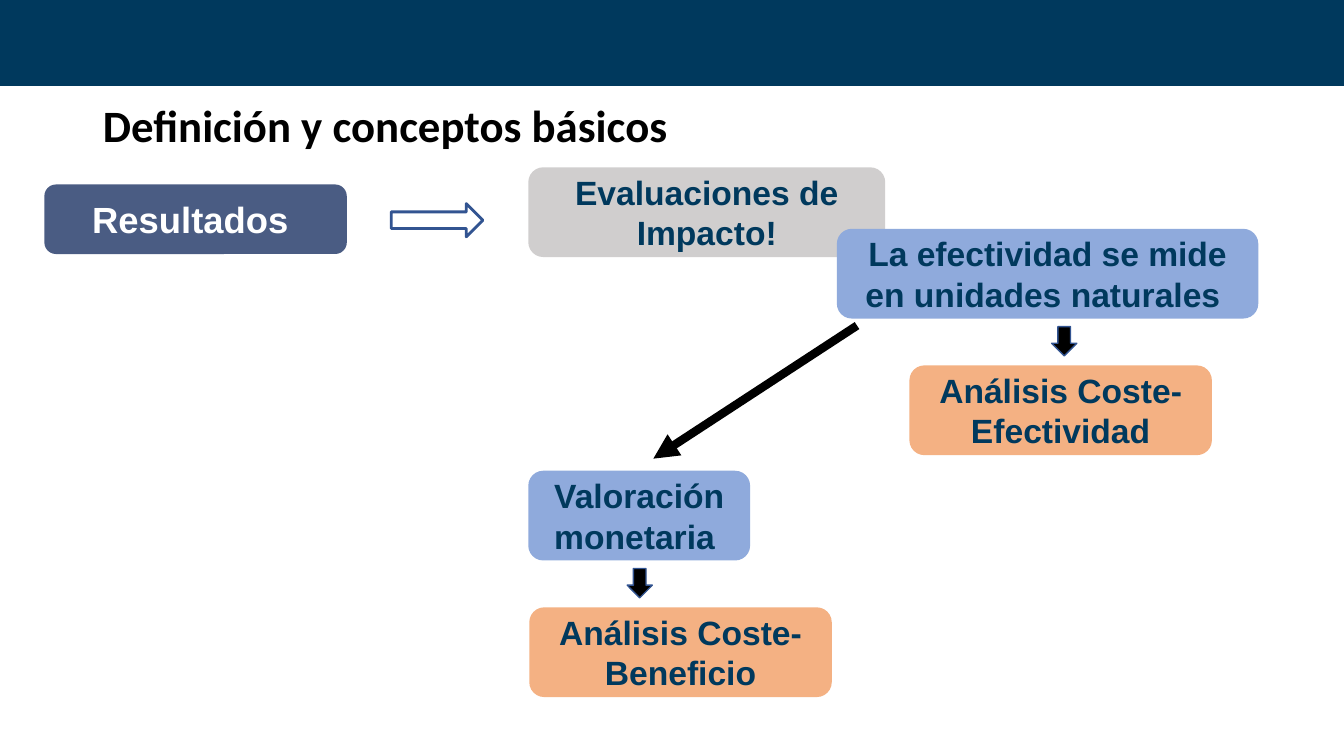
from lxml import etree
from pptx import Presentation
from pptx.dml.color import RGBColor
from pptx.enum.shapes import MSO_CONNECTOR, MSO_SHAPE
from pptx.enum.text import MSO_ANCHOR, MSO_AUTO_SIZE, PP_ALIGN
from pptx.oxml.ns import qn
from pptx.util import Inches, Pt

NAVY = RGBColor(0x00, 0x39, 0x5D)
SLATE = RGBColor(0x4A, 0x5C, 0x83)
GRAY = RGBColor(0xD0, 0xCE, 0xCE)
BLUE = RGBColor(0x8F, 0xAA, 0xDC)
ORANGE = RGBColor(0xF4, 0xB1, 0x83)
OUTLINE = RGBColor(0x32, 0x54, 0x91)
BLACK = RGBColor(0x00, 0x00, 0x00)
WHITE = RGBColor(0xFF, 0xFF, 0xFF)

RECTANGLE = MSO_SHAPE.RECTANGLE
ROUNDED = MSO_SHAPE.ROUNDED_RECTANGLE
RIGHT_ARROW = MSO_SHAPE.RIGHT_ARROW
DOWN_ARROW = MSO_SHAPE.DOWN_ARROW
STRAIGHT = MSO_CONNECTOR.STRAIGHT
MIDDLE = MSO_ANCHOR.MIDDLE
NO_AUTOFIT = MSO_AUTO_SIZE.NONE
LEFT, CENTER = PP_ALIGN.LEFT, PP_ALIGN.CENTER

BOX_HEIGHT = 0.89
ANALYSIS_WIDTH = 3
STEP_ARROW_WIDTH, STEP_ARROW_HEIGHT = 0.25, 0.29


def write_text(shape, text, size=24, color=NAVY, font="Arial", align=CENTER, line_spacing=1.0):
    frame = shape.text_frame
    frame.word_wrap = True
    frame.auto_size = NO_AUTOFIT
    frame.vertical_anchor = MIDDLE
    paragraph = frame.paragraphs[0]
    paragraph.alignment = align
    paragraph.line_spacing = line_spacing
    run = paragraph.add_run()
    run.text = text
    run.font.name = font
    run.font.size = Pt(size)
    run.font.bold = True
    run.font.color.rgb = color


def add_shape(slide, kind, left, top, width, height, fill=None, line=None, line_width=1):
    shape = slide.shapes.add_shape(kind, Inches(left), Inches(top), Inches(width), Inches(height))
    shape.shadow.inherit = False
    if fill is None:
        shape.fill.background()
    else:
        shape.fill.solid()
        shape.fill.fore_color.rgb = fill
    if line is None:
        shape.line.fill.background()
    else:
        shape.line.color.rgb = line
        shape.line.width = Pt(line_width)
    return shape


def add_box(slide, text, left, top, width, fill, height=BOX_HEIGHT, **text_format):
    box = add_shape(slide, ROUNDED, left, top, width, height, fill)
    write_text(box, text, **text_format)


def add_thick_arrow(slide, start, end):
    arrow = slide.shapes.add_connector(STRAIGHT, *(Inches(value) for value in start + end))
    arrow.line.color.rgb = BLACK
    arrow.line.width = Pt(6)
    etree.SubElement(arrow.line._get_or_add_ln(), qn("a:tailEnd"), type="triangle")
    etree.SubElement(arrow._element.spPr, qn("a:effectLst"))


def add_header(slide, width):
    # Top band
    add_shape(slide, RECTANGLE, 0, 0, width, 0.85, NAVY, NAVY)
    # Title
    title = slide.shapes.title
    title.left, title.top = Inches(0.92), Inches(0.74)
    title.width, title.height = Inches(11.5), Inches(1.06)
    write_text(title, "Definición y conceptos básicos", size=32, color=BLACK,
               font="Calibri", align=LEFT, line_spacing=0.9)


def add_results_row(slide, left, top):
    add_box(slide, "Resultados ", left, top + 0.17, 3, SLATE, height=0.69, size=26, color=WHITE)
    add_shape(slide, RIGHT_ARROW, left + 3.44, top + 0.36, 0.91, 0.33,
              line=OUTLINE, line_width=2)
    add_box(slide, "Evaluaciones de Impacto!", left + 4.8, top, 3.54, GRAY)


def add_branch(slide, measure, analysis, left, top, width, analysis_left, arrow_left):
    """Measure on top, a small arrow, and the analysis it leads to."""
    add_box(slide, measure, left, top, width, BLUE)
    add_shape(slide, DOWN_ARROW, arrow_left, top + 0.97,
              STEP_ARROW_WIDTH, STEP_ARROW_HEIGHT, BLACK, OUTLINE)
    add_box(slide, analysis, analysis_left, top + 1.355, ANALYSIS_WIDTH, ORANGE)


def main():
    presentation = Presentation()
    presentation.slide_width = Inches(13.33)
    presentation.slide_height = Inches(7.5)
    slide = presentation.slides.add_slide(presentation.slide_layouts[5])

    add_header(slide, 13.33)
    add_results_row(slide, 0.44, 1.66)

    # Effectiveness and monetary branches
    add_branch(slide, "La efectividad se mide en unidades naturales ",
               "Análisis Coste-Efectividad", 8.3, 2.27, 4.18,
               analysis_left=9.02, arrow_left=10.43)
    add_branch(slide, "Valoración monetaria ", "Análisis Coste-Beneficio",
               5.24, 4.67, 2.2, analysis_left=5.25, arrow_left=6.22)
    add_thick_arrow(slide, (8.5, 3.23), (6.48, 4.55))

    presentation.save("out.pptx")


if __name__ == "__main__":
    main()
